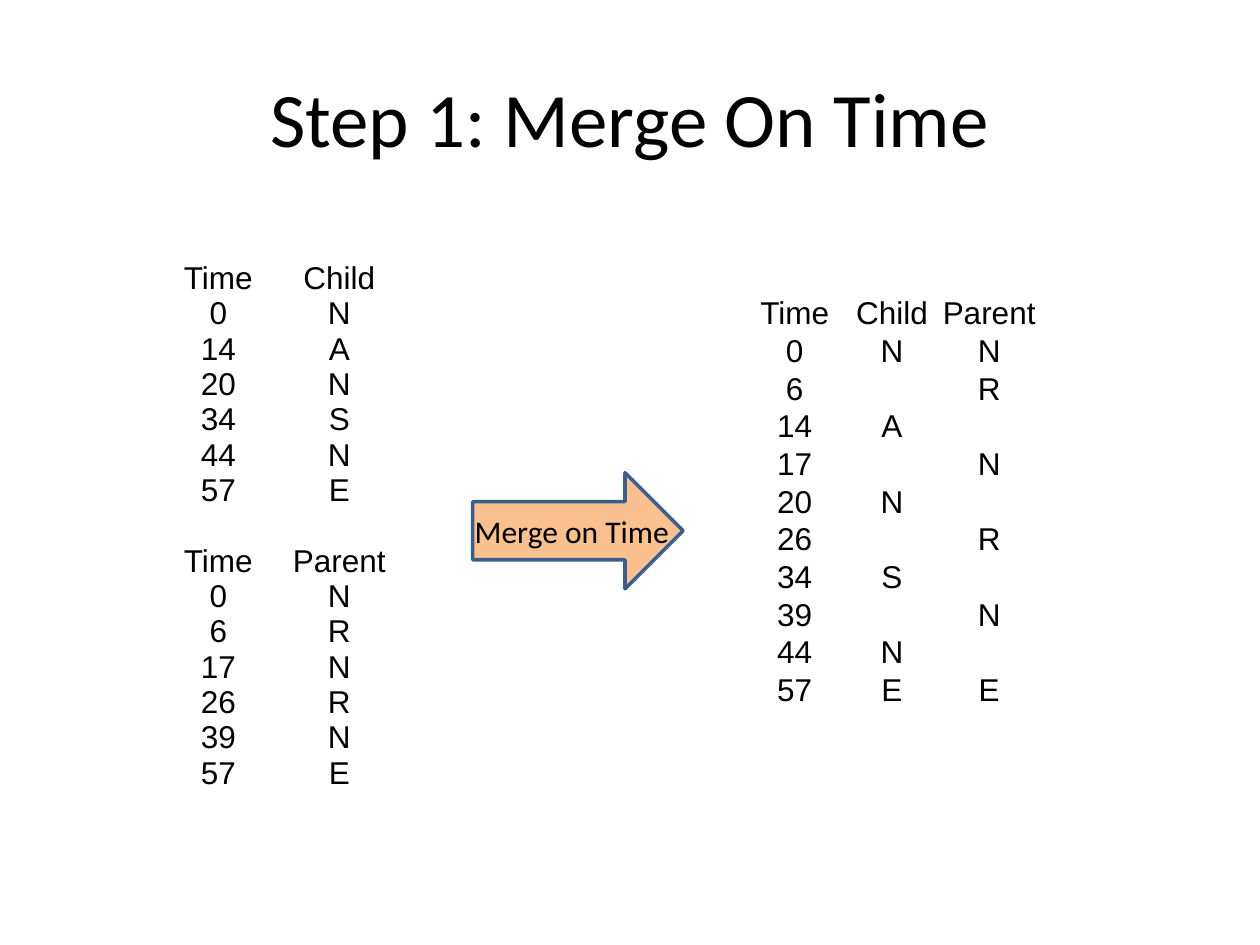
from pptx import Presentation
from pptx.dml.color import RGBColor
from pptx.enum.shapes import MSO_SHAPE as Shape
from pptx.enum.text import MSO_ANCHOR as Anchor, PP_ALIGN as Align
from pptx.util import Cm, Pt


def color(hex_code):
    return RGBColor.from_string(hex_code)


def write(frame, text, font="Calibri", size=18, align=Align.LEFT):
    paragraph = frame.paragraphs[0]
    paragraph.alignment = align
    run = paragraph.add_run()
    run.text = text
    run.font.name = font
    run.font.size = Pt(size)
    run.font.color.rgb = color("000000")


prs = Presentation()
prs.slide_width, prs.slide_height = Cm(25.4), Cm(19.05)
slide = prs.slides.add_slide(prs.slide_layouts[6])

separate = [
    ("Time", "Child"), ("0", "N"), ("14", "A"), ("20", "N"),
    ("34", "S"), ("44", "N"), ("57", "E"),
    ("", ""),
    ("Time", "Parent"), ("0", "N"), ("6", "R"), ("17", "N"),
    ("26", "R"), ("39", "N"), ("57", "E"),
]
merged = [
    ("Time", "Child", "Parent"), ("0", "N", "N"), ("6", "", "R"),
    ("14", "A", ""), ("17", "", "N"), ("20", "N", ""), ("26", "", "R"),
    ("34", "S", ""), ("39", "", "N"), ("44", "N", ""), ("57", "E", "E"),
]

for records, left, top, column_width, row_height in [
    (separate, 3.18, 5.26, 2.44, 0.71),
    (merged, 15.04, 5.92, 1.96, 0.76),
]:
    row_count, column_count = len(records), len(records[0])
    table = slide.shapes.add_table(
        row_count, column_count, Cm(left), Cm(top),
        Cm(column_width * column_count), Cm(row_height * row_count)).table
    table.first_row = table.horz_banding = False
    for column in table.columns:
        column.width = Cm(column_width)
    for row, record in zip(table.rows, records):
        row.height = Cm(row_height)
        for cell, value in zip(row.cells, record):
            cell.fill.background()
            cell.margin_left = cell.margin_right = 0
            cell.margin_top = cell.margin_bottom = 0
            cell.vertical_anchor = Anchor.BOTTOM
            write(cell.text_frame, value, font="Arial", align=Align.CENTER)

merge_step = slide.shapes.add_group_shape()
arrow = merge_step.shapes.add_shape(
    Shape.RIGHT_ARROW, Cm(9.53), Cm(9.53), Cm(4.24), Cm(2.34))
arrow.shadow.inherit = False
arrow.fill.solid()
arrow.fill.fore_color.rgb = color("FAC090")
arrow.line.color.rgb = color("3A5F8C")
arrow.line.width = Pt(2)
arrow_label = merge_step.shapes.add_textbox(Cm(9.32), Cm(10.19), Cm(4.45), Cm(1.02))
arrow_label.text_frame.word_wrap = False
write(arrow_label.text_frame, "Merge on Time")

title = slide.shapes.add_textbox(Cm(1.27), Cm(0.76), Cm(22.86), Cm(3.18))
title.text_frame.word_wrap = True
title.text_frame.vertical_anchor = Anchor.MIDDLE
write(title.text_frame, "Step 1: Merge On Time", size=44, align=Align.CENTER)

prs.save("out.pptx")
